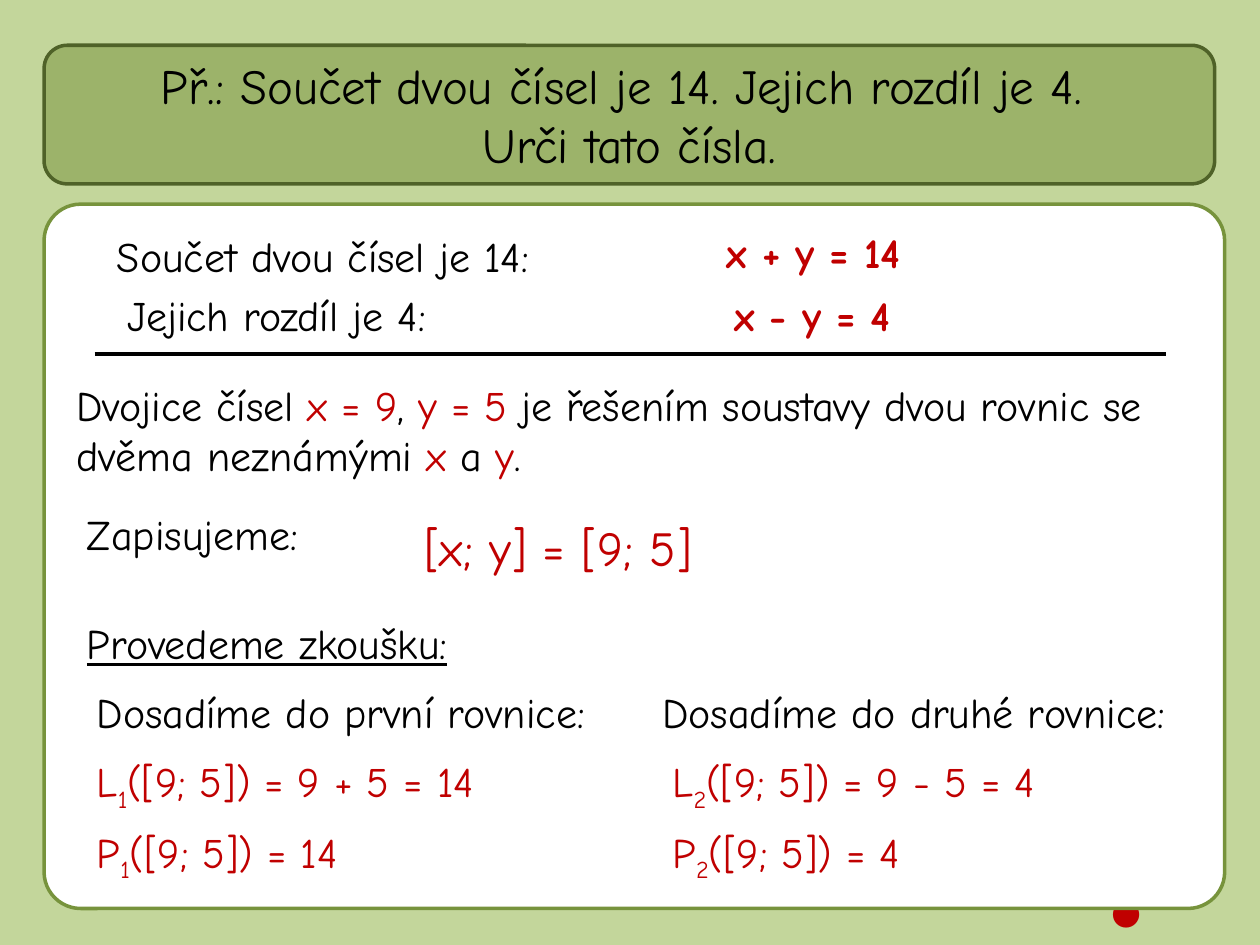
"""Build a slide that checks the solution of two linear equations."""
import dataclasses

import lxml.etree
import pptx
import pptx.dml.color
import pptx.enum.shapes
import pptx.enum.text
import pptx.oxml.ns
import pptx.util

Inches = pptx.util.Inches
Pt = pptx.util.Pt
qn = pptx.oxml.ns.qn


def shade(code):
    return pptx.dml.color.RGBColor.from_string(code)


@dataclasses.dataclass(frozen=True)
class Theme:
    ground: str = "C3D69B"
    green: str = "77933C"
    dark: str = "4F6228"
    white: str = "FFFFFF"
    black: str = "000000"
    red: str = "C00000"
    face: str = "Comic Neue"
    mark_face: str = "Lato"
    body: int = 24
    large: int = 28
    mark: int = 120
    rule: int = 2


class Deck:
    def __init__(self, theme):
        self.theme = theme
        self.show = pptx.Presentation()
        self.show.slide_width = Inches(10)
        self.show.slide_height = Inches(7.5)
        self.slide = self.show.slides.add_slide(self.show.slide_layouts[6])
        fill = self.slide.background.fill
        fill.solid()
        fill.fore_color.rgb = shade(theme.ground)

    def style(self, run, color, size=None, face=None, bold=None, under=None):
        font = run.font
        font.name = face or self.theme.face
        font.size = Pt(size or self.theme.body)
        font.color.rgb = shade(color)
        font.bold = bold
        font.underline = under

    def panel(self, box, fill, edge, round_by=None, alpha=None):
        kind = pptx.enum.shapes.MSO_SHAPE.ROUNDED_RECTANGLE
        shape = self.slide.shapes.add_shape(kind, *map(Inches, box))
        shape.shadow.inherit = False
        shape.fill.solid()
        shape.fill.fore_color.rgb = shade(fill)
        shape.line.color.rgb = shade(edge)
        shape.line.width = Pt(self.theme.rule)
        if round_by is not None:
            shape.adjustments[0] = round_by
        if alpha is not None:
            tint = shape.fill._xPr.find(qn("a:solidFill"))[0]
            lxml.etree.SubElement(tint, qn("a:alpha")).set("val", str(alpha * 1000))
        return shape

    def title(self, box, text):
        shape = self.panel(box, self.theme.green, self.theme.dark, alpha=51)
        frame = shape.text_frame
        frame.vertical_anchor = pptx.enum.text.MSO_ANCHOR.MIDDLE
        frame.text = text
        for para in frame.paragraphs:
            para.alignment = pptx.enum.text.PP_ALIGN.CENTER
            for run in para.runs:
                self.style(run, self.theme.black, self.theme.large)

    def frame(self, box):
        frame = self.slide.shapes.add_textbox(*map(Inches, box)).text_frame
        frame.word_wrap = True
        return frame

    def label(self, box, text, color=None, **look):
        frame = self.frame(box)
        frame.text = text
        run = frame.paragraphs[0].runs[0]
        self.style(run, color or self.theme.black, **look)

    def mixed(self, box, parts):
        para = self.frame(box).paragraphs[0]
        for text, color in parts:
            run = para.add_run()
            run.text = text
            self.style(run, color)
        return para

    def check(self, box, side, index, rest):
        red = self.theme.red
        para = self.mixed(box, [(side, red), (index, red), (rest, red)])
        para.runs[1].font._element.set("baseline", "-25000")

    def rule(self, left, right, top):
        kind = pptx.enum.shapes.MSO_CONNECTOR.STRAIGHT
        line = self.slide.shapes.add_connector(
            kind, Inches(left), Inches(top), Inches(right), Inches(top))
        line.line.color.rgb = shade(self.theme.black)
        line.line.width = Pt(self.theme.rule)
        lxml.etree.SubElement(line._element.spPr, qn("a:effectLst"))


def main():
    theme = Theme()
    red, black = theme.red, theme.black
    deck = Deck(theme)
    deck.title((0.35, 0.36, 9.29, 1.1),
               "Př.: Součet dvou čísel je 14. Jejich rozdíl je 4. \nUrči tato čísla.")
    deck.label((8.62, 5.64, 0.71, 2.12), "!", red,
               size=theme.mark, face=theme.mark_face)
    deck.panel((0.35, 1.62, 9.37, 5.59), theme.white, theme.green, round_by=0.052)

    deck.label((0.83, 1.78, 4.8, 0.5), "Součet dvou čísel je 14:")
    deck.label((5.67, 1.75, 2.87, 0.5), "x + y = 14", red, bold=True)
    deck.label((0.91, 2.25, 3.62, 0.5), "Jejich rozdíl je 4:")
    deck.label((5.73, 2.25, 2.89, 0.5), "x - y = 4", red, bold=True)
    deck.rule(0.75, 9.25, 2.81)

    deck.mixed((0.51, 2.96, 9.06, 0.91), [
        ("Dvojice čísel ", black), ("x = 9", red), (", ", black), ("y = 5 ", red),
        ("je řešením soustavy dvou rovnic se dvěma neznámými ", black),
        ("x", red), (" a ", black), ("y", red), (".", black)])
    deck.label((0.59, 3.99, 2.91, 0.5), "Zapisujeme:")
    deck.label((3.27, 4.06, 2.99, 0.57), "[x; y] = [9; 5]", red, size=theme.large)
    deck.label((0.59, 4.85, 3.78, 0.5), "Provedeme zkoušku:", under=True)

    tests = [
        (0.67, 0.67, "první", "1", "9 + 5 = 14", "14"),
        (5.16, 5.24, "druhé", "2", "9 - 5 = 4", "4"),
    ]
    for head, left, name, index, sum_text, value in tests:
        deck.label((head, 5.4, 4.49, 0.5), f"Dosadíme do {name} rovnice:")
        deck.check((left, 5.95, 4.09, 0.5), "L", index, f"([9; 5]) = {sum_text}")
        deck.check((left, 6.51, 3.15, 0.5), "P", index, f"([9; 5]) = {value}")
    deck.show.save("out.pptx")


if __name__ == "__main__":
    main()
